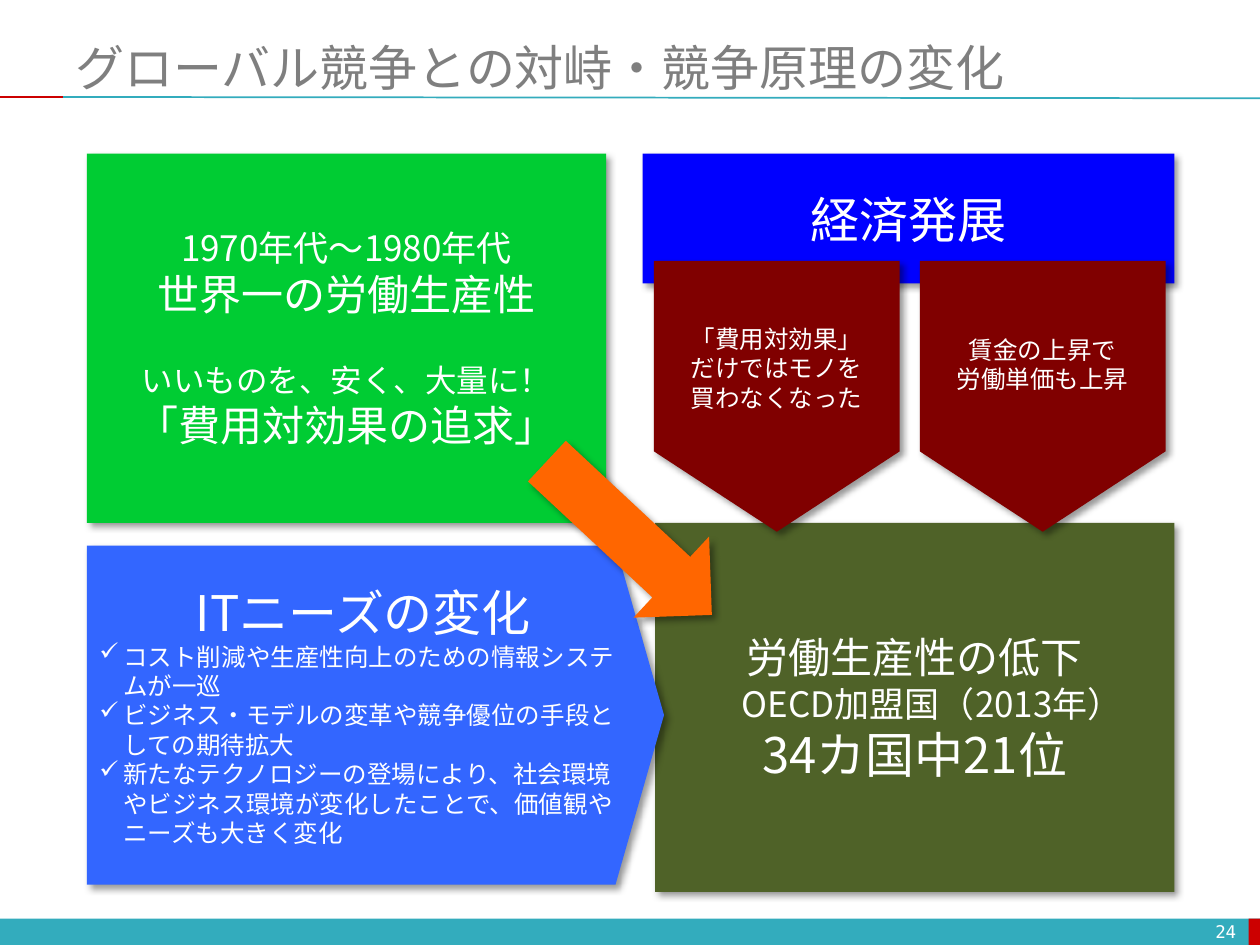
"""Build the slide on global competition and changing competitive principles."""
from lxml import etree
from pptx import Presentation
from pptx.dml.color import RGBColor
from pptx.enum.shapes import MSO_CONNECTOR, MSO_SHAPE
from pptx.enum.text import MSO_ANCHOR, MSO_AUTO_SIZE, PP_ALIGN
from pptx.oxml import parse_xml
from pptx.oxml.ns import nsdecls, qn
from pptx.util import Inches, Pt

RECTANGLE, PENTAGON, ARROW = MSO_SHAPE.RECTANGLE, MSO_SHAPE.PENTAGON, MSO_SHAPE.RIGHT_ARROW
LEFT, CENTER, RIGHT = PP_ALIGN.LEFT, PP_ALIGN.CENTER, PP_ALIGN.RIGHT
TOP, MIDDLE = MSO_ANCHOR.TOP, MSO_ANCHOR.MIDDLE
FIXED_SIZE = MSO_AUTO_SIZE.NONE
STRAIGHT = MSO_CONNECTOR.STRAIGHT

COLORS = {
    "teal": "33ACBD", "red": "CC0000", "gray": "7F7F7F", "white": "FFFFFF",
    "blue": "0000FF", "green": "00CC33", "olive": "4F6228", "sky": "3366FF",
    "maroon": "800000", "orange": "FF6600",
}
BODY_FONT, TITLE_FONT, NUMBER_FONT = "Noto Sans CJK JP", "Calibri", "DejaVu Sans Mono"
WIDTH, HEIGHT = 10, 7.5
LEFT_COLUMN, RIGHT_COLUMN = 0.69, 5.2
TOP_ROW, BOTTOM_ROW = 1.22, 4.15
PANEL_WIDTH, PANEL_HEIGHT = 4.12, 2.93
RULE_TOP, FOOTER_TOP, FOOTER_HEIGHT = 0.77, 7.29, 0.22
WAGE_STEP = 2.11


def color(name):
    """Return the named colour."""
    return RGBColor.from_string(COLORS[name])


def inches(*lengths):
    """Convert lengths in inches to slide units."""
    return [Inches(length) for length in lengths]


def style_paragraph(para, size, align=CENTER, tint="white", font=BODY_FONT):
    """Align a paragraph and format its runs."""
    para.alignment = align
    for span in para.runs:
        span.font.size = Pt(size)
        span.font.name = font
        span.font.color.rgb = color(tint)
        if font == BODY_FONT:
            east_asian = etree.SubElement(span.font._element, qn("a:ea"))
            east_asian.set("typeface", font)


def add_bullet(para):
    """Give a paragraph a check mark with a hanging indent."""
    properties = para._p.get_or_add_pPr()
    properties.set("marL", str(Inches(0.19)))
    properties.set("indent", str(-Inches(0.19)))
    etree.SubElement(properties, qn("a:buChar")).set("char", "✓")


def write_lines(shape, lines, anchor=MIDDLE):
    """Fill a shape with centred lines given as pairs of text and size."""
    frame = shape.text_frame
    frame.word_wrap = True
    frame.vertical_anchor = anchor
    frame.text = "\n".join(text for text, _ in lines)
    for para, (_, size) in zip(frame.paragraphs, lines):
        style_paragraph(para, size)


def add_block(page, kind, place, fill, adjust=None, turn=0):
    """Add a filled shape without outline or shadow."""
    block = page.shapes.add_shape(kind, *inches(*place))
    block.shadow.inherit = False
    block.fill.solid()
    block.fill.fore_color.rgb = color(fill)
    block.line.fill.background()
    block.rotation = turn
    if adjust is not None:
        block.adjustments[0] = adjust
    return block


def add_panel(page, kind, place, fill, lines=(), adjust=None, turn=0):
    """Add a block with a soft shadow and optional lines of text."""
    panel = add_block(page, kind, place, fill, adjust, turn)
    effects = panel._element.spPr.find(qn("a:effectLst"))
    effects.append(parse_xml(
        f'<a:outerShdw {nsdecls("a")} blurRad="{Pt(4)}" dist="{Pt(3)}" dir="2700000" '
        'algn="tl" rotWithShape="0"><a:srgbClr val="000000"><a:alpha val="40000"/>'
        '</a:srgbClr></a:outerShdw>'))
    if lines:
        write_lines(panel, lines)
    return panel


def add_label(page, place, lines, anchor=TOP):
    """Add a wrapped text box."""
    label = page.shapes.add_textbox(*inches(*place))
    write_lines(label, lines, anchor)
    return label


def add_rule(page, start, end, tint):
    """Add a thin straight line."""
    rule = page.shapes.add_connector(STRAIGHT, *inches(*start, *end))
    rule.line.color.rgb = color(tint)
    rule.line.width = Pt(1)
    etree.SubElement(rule._element.spPr, qn("a:effectLst"))


def add_title(page, text):
    """Place and format the title."""
    title = page.shapes.title
    title.left, title.top, title.width, title.height = inches(0.5, 0.3, 9.5, 0.46)
    frame = title.text_frame
    frame.text = text
    frame.auto_size = FIXED_SIZE
    frame.vertical_anchor = MIDDLE
    style_paragraph(frame.paragraphs[0], 28, LEFT, "gray", TITLE_FONT)


def add_frame(page):
    """Add the title rules, the footer bar and the page number."""
    add_block(page, RECTANGLE, (0, FOOTER_TOP, WIDTH, FOOTER_HEIGHT), "teal")
    add_block(page, RECTANGLE, (9.91, FOOTER_TOP, 0.1, FOOTER_HEIGHT), "red")
    add_rule(page, (0.5, RULE_TOP), (WIDTH, RULE_TOP + 0.01), "teal")
    add_rule(page, (0, RULE_TOP), (0.5, RULE_TOP), "red")
    number = add_label(page, (7.58, 7.27, 2.33, 0.24), [("24", 10)], MIDDLE)
    style_paragraph(number.text_frame.paragraphs[0], 10, RIGHT, font=NUMBER_FONT)


def add_needs(page):
    """Add the pentagon with the bulleted changes in IT needs."""
    needs = add_panel(page, PENTAGON, (LEFT_COLUMN, 4.33, 4.58, 2.69), "sky", [
        ("ITニーズの変化", 28),
        ("コスト削減や生産性向上のための情報システムが一巡", 14),
        ("ビジネス・モデルの変革や競争優位の手段としての期待拡大", 14),
        ("新たなテクノロジーの登場により、社会環境やビジネス環境が変化したことで、"
         "価値観やニーズも大きく変化", 14),
    ], adjust=0.143)
    for para in needs.text_frame.paragraphs[1:]:
        add_bullet(para)
        para.alignment = LEFT


def main():
    """Build and save the deck."""
    deck = Presentation()
    deck.slide_width, deck.slide_height = inches(WIDTH, HEIGHT)
    page = deck.slides.add_slide(deck.slide_layouts[5])
    add_frame(page)
    add_title(page, "グローバル競争との対峙・競争原理の変化")

    add_panel(page, RECTANGLE, (5.1, TOP_ROW, 4.22, 1.03), "blue", [("経済発展", 28)])
    past = add_panel(
        page, RECTANGLE, (LEFT_COLUMN, TOP_ROW, PANEL_WIDTH, PANEL_HEIGHT), "green",
        [("1970年代〜1980年代", 20), ("世界一の労働生産性", 24),
         ("いいものを、安く、大量に！", 18), ("「費用対効果の追求」", 24)])
    past.text_frame.paragraphs[2].space_before = Pt(24)
    add_panel(
        page, RECTANGLE, (RIGHT_COLUMN, BOTTOM_ROW, PANEL_WIDTH, PANEL_HEIGHT), "olive",
        [("労働生産性の低下", 24), ("　OECD加盟国（2013年）", 20), ("34カ国中21位", 28)])
    add_needs(page)

    for column in range(2):
        place = (5.09 + column * WAGE_STEP, 2.17, 2.15, 1.95)
        add_panel(page, PENTAGON, place, "maroon", adjust=0.327, turn=90)
    add_label(page, (RIGHT_COLUMN, 2.52, 1.93, 0.81),
              [("「費用対効果」", 14), ("だけではモノを", 14), ("買わなくなった", 14)])
    add_label(page, (RIGHT_COLUMN + WAGE_STEP, 2.61, 1.93, 0.57),
              [("賃金の上昇で", 14), ("労働単価も上昇", 14)])
    add_panel(page, ARROW, (4.1, 3.83, 1.79, 0.88), "orange", turn=43)
    deck.save("out.pptx")


if __name__ == "__main__":
    main()
